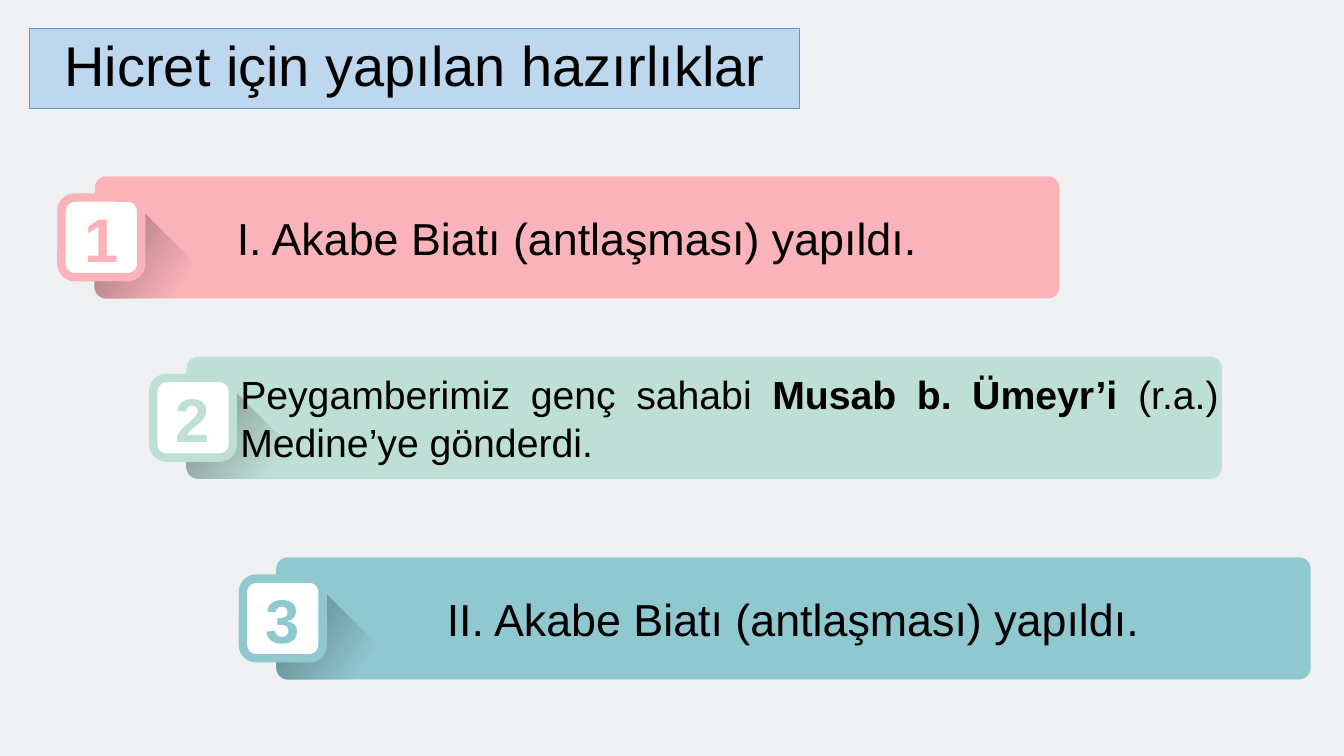
from math import cos, pi, sin

from lxml import etree
from pptx import Presentation
from pptx.dml.color import RGBColor
from pptx.enum.shapes import MSO_SHAPE
from pptx.enum.text import MSO_ANCHOR, PP_ALIGN
from pptx.oxml.ns import qn
from pptx.util import Inches, Pt

RECT, ROUND = MSO_SHAPE.RECTANGLE, MSO_SHAPE.ROUNDED_RECTANGLE
MIDDLE = MSO_ANCHOR.MIDDLE
CENTER, JUSTIFY = PP_ALIGN.CENTER, PP_ALIGN.JUSTIFY
BLACK = RGBColor(0x00, 0x00, 0x00)
WHITE = RGBColor(0xFF, 0xFF, 0xFF)
GREY = RGBColor(0xEE, 0xF0, 0xF2)
PINK = RGBColor(0xFA, 0xB3, 0xB9)
MINT = RGBColor(0xBE, 0xDF, 0xD6)
TEAL = RGBColor(0x90, 0xC8, 0xD0)
PALE_BLUE = RGBColor(0xBD, 0xD7, 0xEE)
BLUE = RGBColor(0x5B, 0x9B, 0xD5)
FONT = "Arial"
WIDTH, HEIGHT = 13.33, 7.5
BAR_HEIGHT, BADGE = 1.21, 0.79
CORNER = 0.12

STEPS = [
    (0.94, 1.75, 9.57, PINK, 32, CENTER,
     [("I. Akabe Biatı (antlaşması) yapıldı.", False)]),
    (1.85, 3.54, 10.27, MINT, 28, JUSTIFY,
     [("Peygamberimiz genç sahabi ", False), ("Musab b. Ümeyr’i ", True),
      ("(r.a.) Medine’ye gönderdi.", False)]),
    (2.74, 5.53, 10.26, TEAL, 32, CENTER,
     [("II. Akabe Biatı (antlaşması) yapıldı.", False)]),
]


def add_box(s, kind, x, y, w, h, fill, line=None, weight=0):
    """Add a flat filled shape, outlined only if a line colour is given."""
    sp = s.shapes.add_shape(kind, Inches(x), Inches(y), Inches(w), Inches(h))
    sp.shadow.inherit = False
    sp.fill.solid()
    sp.fill.fore_color.rgb = fill
    if line is None:
        sp.line.fill.background()
    else:
        sp.line.color.rgb = line
        sp.line.width = Pt(weight)
    return sp


def write(sp, runs, size, color, align=CENTER, inset=0):
    """Write runs of (text, bold) in the shape and return the paragraph."""
    tf = sp.text_frame
    tf.word_wrap = True
    tf.vertical_anchor = MIDDLE
    tf.margin_left = tf.margin_right = Inches(inset)
    tf.margin_top = tf.margin_bottom = Inches(inset / 2)
    p = tf.paragraphs[0]
    p.alignment = align
    for text, bold in runs:
        r = p.add_run()
        r.text = text
        r.font.name = FONT
        r.font.size = Pt(size)
        r.font.bold = bold
        r.font.color.rgb = color
    return p


def add_long_shadow(s, x, y):
    """Add the fading diagonal shadow inside a bar whose corner is x, y."""
    bottom = y + BAR_HEIGHT
    arc = [(x + CORNER * (1 - sin(i * pi / 12)),
            bottom - CORNER * (1 - cos(i * pi / 12))) for i in range(7)]
    outline = [(x + 0.37, y + 0.24), (x + 1.35, bottom)] + arc
    fb = s.shapes.build_freeform(Inches(x), Inches(y + 0.24), 1)
    fb.add_line_segments([(Inches(px), Inches(py)) for px, py in outline])
    sp = fb.convert_to_shape()
    sp.shadow.inherit = False
    sp.line.fill.background()
    sp.fill.gradient()
    sp.fill.gradient_angle = 145
    for stop, position, alpha in zip(sp.fill.gradient_stops, (0.29, 0.95), (0, 37)):
        stop.position = position
        stop.color.rgb = BLACK
    for color, alpha in zip(sp._element.spPr.iter(qn("a:srgbClr")), (0, 37)):
        etree.SubElement(color, qn("a:alpha")).set("val", str(alpha * 1000))


def add_step(s, number, x, y, w, color, size, align, runs):
    """Add a numbered step: bar with text, long shadow and badge."""
    bar = add_box(s, ROUND, x, y, w, BAR_HEIGHT, color)
    bar.adjustments[0] = 0.095
    p = write(bar, runs, size, BLACK, align)
    if align == JUSTIFY:
        p.level = 1
        pPr = p._p.get_or_add_pPr()
        pPr.set("marL", str(Inches(0.5)))
        pPr.set("indent", "0")
    add_long_shadow(s, x, y)
    badge = add_box(s, ROUND, x - 0.33, y + (BAR_HEIGHT - BADGE) / 2,
                    BADGE, BADGE, WHITE, color, 6)
    write(badge, [(str(number), True)], 44, color)


def add_title(s, x, y, w, h):
    """Add the framed slide title."""
    sp = add_box(s, RECT, x, y, w, h, PALE_BLUE, BLUE, 0.5)
    p = write(sp, [("Hicret için yapılan hazırlıklar", False)], 40, BLACK, inset=0.1)
    p.line_spacing = 0.9


def main():
    """Build and save the slide."""
    prs = Presentation()
    prs.slide_width, prs.slide_height = Inches(WIDTH), Inches(HEIGHT)
    s = prs.slides.add_slide(prs.slide_layouts[6])
    add_box(s, RECT, 0, 0, WIDTH, HEIGHT, GREY)
    for number, step in enumerate(STEPS, 1):
        add_step(s, number, *step)
    add_title(s, 0.29, 0.28, 7.64, 0.8)
    prs.save("out.pptx")


if __name__ == "__main__":
    main()
